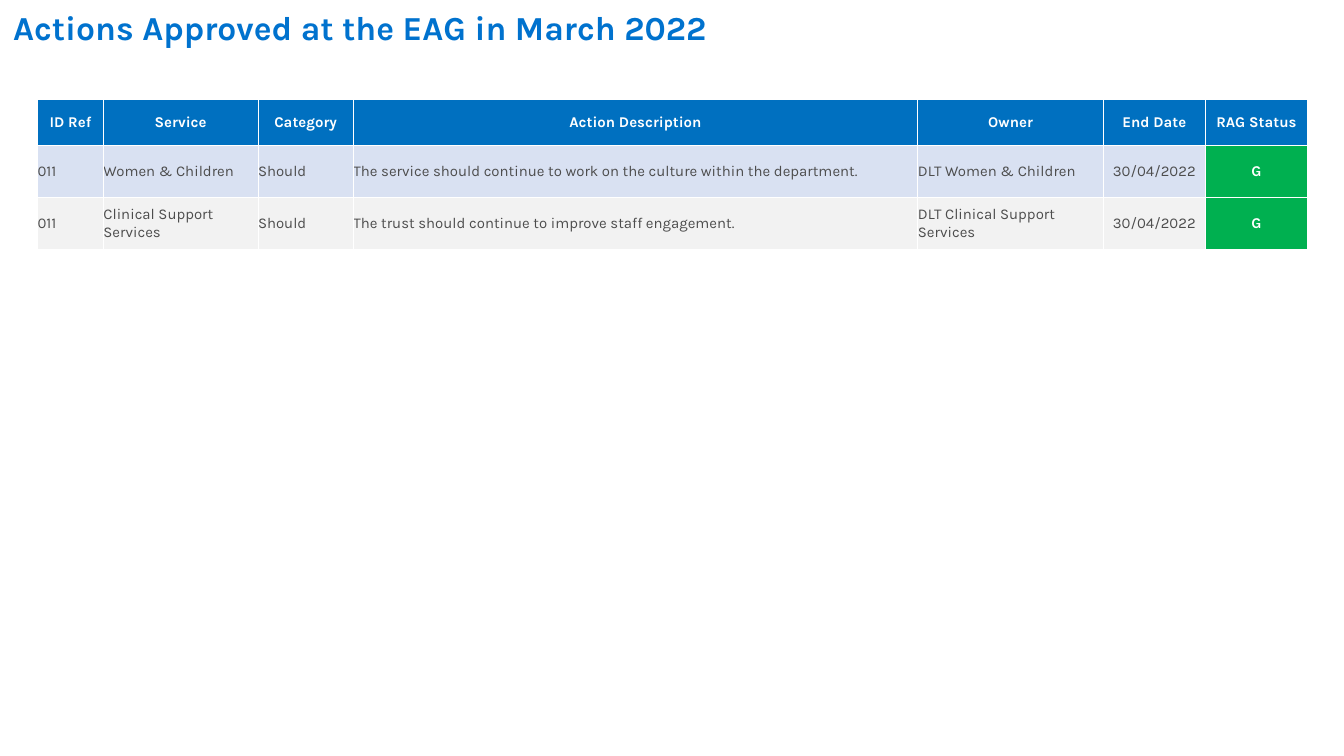
from dataclasses import dataclass

from lxml.etree import SubElement
from pptx import Presentation
from pptx.dml.color import RGBColor
from pptx.enum.text import MSO_ANCHOR, PP_ALIGN
from pptx.oxml.ns import qn
from pptx.table import _Cell
from pptx.text.text import TextFrame
from pptx.util import Inches, Pt

FONT = "Karla"
TITLE_BLUE = RGBColor(0x00, 0x72, 0xCE)
HEADER_BLUE = RGBColor(0x00, 0x70, 0xC0)
PALE_BLUE = RGBColor(0xD9, 0xE1, 0xF2)
PALE_GREY = RGBColor(0xF2, 0xF2, 0xF2)
GREEN = RGBColor(0x00, 0xB0, 0x50)
DARK_GREY = RGBColor(0x4D, 0x4D, 0x4D)
WHITE = RGBColor(0xFF, 0xFF, 0xFF)


@dataclass(frozen=True)
class Column:
    heading: str
    width: float
    align: PP_ALIGN = PP_ALIGN.LEFT


@dataclass(frozen=True)
class Action:
    values: tuple[str, ...]
    fill: RGBColor


COLUMNS = (
    Column("ID Ref", 0.49),
    Column("Service", 1.15),
    Column("Category", 0.71),
    Column("Action Description", 4.2),
    Column("Owner", 1.38),
    Column("End Date", 0.76, PP_ALIGN.CENTER),
    Column("RAG Status", 0.76, PP_ALIGN.CENTER),
)
ACTIONS = (
    Action(("011", "Women & Children", "Should",
            "The service should continue to work on the culture within the department.",
            "DLT Women & Children", "30/04/2022", "G"), PALE_BLUE),
    Action(("011", "Clinical Support Services", "Should",
            "The trust should continue to improve staff engagement.",
            "DLT Clinical Support Services", "30/04/2022", "G"), PALE_GREY),
)
HEADER_HEIGHT, ROW_HEIGHT = 0.34, 0.39


def write(tf: TextFrame, text: str, *, size: float = 8, color: RGBColor = WHITE,
          bold: bool = True, align: PP_ALIGN = PP_ALIGN.CENTER) -> None:
    """Fill a text frame with one formatted paragraph."""
    tf.word_wrap = True
    p = tf.paragraphs[0]
    p.alignment = align
    r = p.add_run()
    r.text = text
    r.font.name, r.font.size, r.font.bold = FONT, Pt(size), bold
    r.font.color.rgb = color


def style_cell(cell: _Cell, fill: RGBColor) -> None:
    """Give a cell thin white borders, no margins and a solid fill."""
    cell.margin_left = cell.margin_right = cell.margin_top = cell.margin_bottom = 0
    cell.vertical_anchor = MSO_ANCHOR.MIDDLE
    tc_pr = cell._tc.get_or_add_tcPr()
    for side in ("a:lnL", "a:lnR", "a:lnT", "a:lnB"):
        ln = SubElement(tc_pr, qn(side), w=str(Pt(0.5)))
        SubElement(SubElement(ln, qn("a:solidFill")), qn("a:srgbClr"), val=str(WHITE))
    cell.fill.solid()
    cell.fill.fore_color.rgb = fill


def main() -> None:
    """Build the slide of approved actions."""
    prs = Presentation()
    prs.slide_width, prs.slide_height = Inches(10), Inches(10) * 9 // 16
    s = prs.slides.add_slide(prs.slide_layouts[6])

    title = s.shapes.add_textbox(0, 0, prs.slide_width, Inches(0.46))
    title.text_frame.vertical_anchor = MSO_ANCHOR.TOP
    write(title.text_frame, "Actions Approved at the EAG in March 2022",
          size=18, color=TITLE_BLUE, align=PP_ALIGN.LEFT)

    heights = [HEADER_HEIGHT] + [ROW_HEIGHT] * len(ACTIONS)
    table = s.shapes.add_table(
        len(heights), len(COLUMNS), Inches(0.28), Inches(0.74),
        Inches(sum(c.width for c in COLUMNS)), Inches(sum(heights))).table
    for row, height in zip(table.rows, heights):
        row.height = Inches(height)

    status = len(COLUMNS) - 1
    for i, column in enumerate(COLUMNS):
        table.columns[i].width = Inches(column.width)
        header = table.cell(0, i)
        style_cell(header, HEADER_BLUE)
        write(header.text_frame, column.heading)
        for j, action in enumerate(ACTIONS, start=1):
            cell = table.cell(j, i)
            is_status = i == status
            style_cell(cell, GREEN if is_status else action.fill)
            write(cell.text_frame, action.values[i], bold=is_status,
                  color=WHITE if is_status else DARK_GREY, align=column.align)

    prs.save("out.pptx")


if __name__ == "__main__":
    main()
